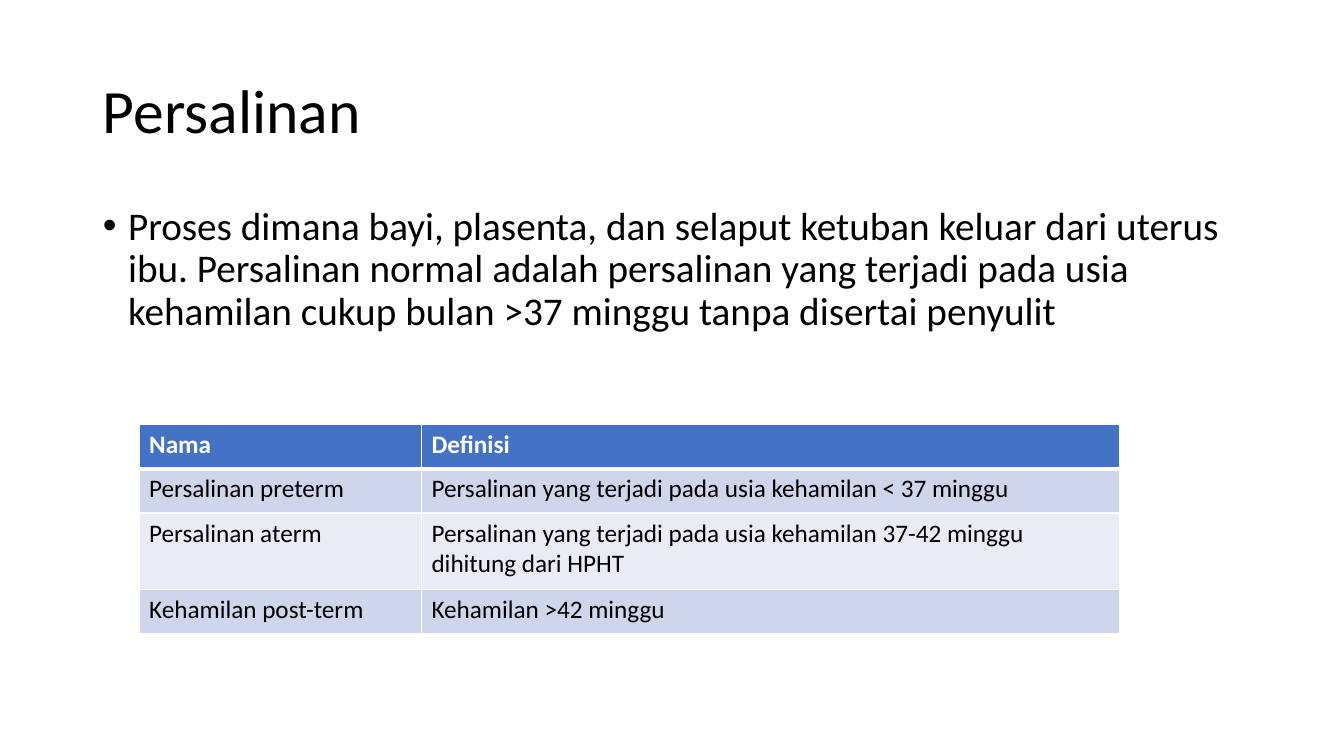
import pptx
import pptx.dml.color
import pptx.enum.text
import pptx.oxml
import pptx.oxml.ns
import pptx.util

Inches = pptx.util.Inches
Pt = pptx.util.Pt
FONT = "Calibri"
BLACK, WHITE = "000000", "FFFFFF"
HEADER_FILL = "4472C4"
BAND_FILLS = ["E9EBF5", "CFD5EA"]
DEFINITIONS = [
    ("Nama", "Definisi"),
    ("Persalinan preterm", "Persalinan yang terjadi pada usia kehamilan < 37 minggu"),
    ("Persalinan aterm", "Persalinan yang terjadi pada usia kehamilan 37-42 minggu dihitung dari HPHT"),
    ("Kehamilan post-term", "Kehamilan >42 minggu"),
]


def rgb(value):
    return pptx.dml.color.RGBColor.from_string(value)


def set_font(p, size, color, bold=False):
    p.font.name = FONT
    p.font.size = Pt(size)
    p.font.bold = bold
    p.font.color.rgb = rgb(color)


def place(sp, left, top, width, height):
    sp.left, sp.top = Inches(left), Inches(top)
    sp.width, sp.height = Inches(width), Inches(height)


def write_placeholder(sp, box, text, size, anchor):
    place(sp, *box)
    tf = sp.text_frame
    tf.text = text
    tf.word_wrap = True
    tf.auto_size = pptx.enum.text.MSO_AUTO_SIZE.NONE
    tf.vertical_anchor = anchor
    p = tf.paragraphs[0]
    p.alignment = pptx.enum.text.PP_ALIGN.LEFT
    p.line_spacing = 0.9
    set_font(p, size, BLACK)
    p.runs[0].font.size = Pt(size)
    return p


def add_title(s, box):
    p = write_placeholder(s.shapes.title, box, "Persalinan", 44,
                          pptx.enum.text.MSO_ANCHOR.MIDDLE)
    p.space_before = Pt(0)


def add_body(s, box):
    text = ("Proses dimana bayi, plasenta, dan selaput ketuban keluar dari uterus ibu. "
            "Persalinan normal adalah persalinan yang terjadi pada usia kehamilan "
            "cukup bulan >37 minggu tanpa disertai penyulit")
    p = write_placeholder(s.placeholders[1], box, text, 28,
                          pptx.enum.text.MSO_ANCHOR.TOP)
    p.space_before = Pt(10)
    pPr = p._p.get_or_add_pPr()
    pPr.set("marL", str(Inches(0.25)))
    pPr.set("indent", str(-Inches(0.25)))


def set_borders(cell, bottom):
    tcPr = cell._tc.get_or_add_tcPr()
    widths = {"lnL": 1, "lnR": 1, "lnT": 1, "lnB": bottom}
    for i, (side, width) in enumerate(widths.items()):
        tcPr.insert(i, pptx.oxml.parse_xml(
            f'<a:{side} {pptx.oxml.ns.nsdecls("a")} w="{Pt(width)}">'
            f'<a:solidFill><a:srgbClr val="{WHITE}"/></a:solidFill></a:{side}>'))


def add_definitions(s, left, top, col_widths, row_heights):
    table = s.shapes.add_table(
        len(row_heights), len(col_widths), Inches(left), Inches(top),
        Inches(sum(col_widths)), Inches(sum(row_heights))).table
    for column, width in zip(table.columns, col_widths):
        column.width = Inches(width)
    for i, (row, height) in enumerate(zip(table.rows, row_heights)):
        row.height = Inches(height)
        header = i == 0
        for cell, text in zip(row.cells, DEFINITIONS[i]):
            cell.text = text
            cell.fill.solid()
            cell.fill.fore_color.rgb = rgb(HEADER_FILL if header else BAND_FILLS[i % 2])
            set_font(cell.text_frame.paragraphs[0], 18, WHITE if header else BLACK, header)
            set_borders(cell, 3 if header else 1)
            if i == 1:
                cell._tc.tcPr.find(pptx.oxml.ns.qn("a:lnT")).set("w", str(Pt(3)))


def main():
    prs = pptx.Presentation()
    prs.slide_width, prs.slide_height = Inches(13.33), Inches(7.5)
    s = prs.slides.add_slide(prs.slide_layouts[1])
    add_title(s, (0.92, 0.4, 11.5, 1.45))
    add_body(s, (0.92, 2, 11.5, 4.76))
    add_definitions(s, 1.38, 4.21, [2.8, 6.92], [0.44, 0.44, 0.76, 0.44])
    prs.save("out.pptx")


if __name__ == "__main__":
    main()
